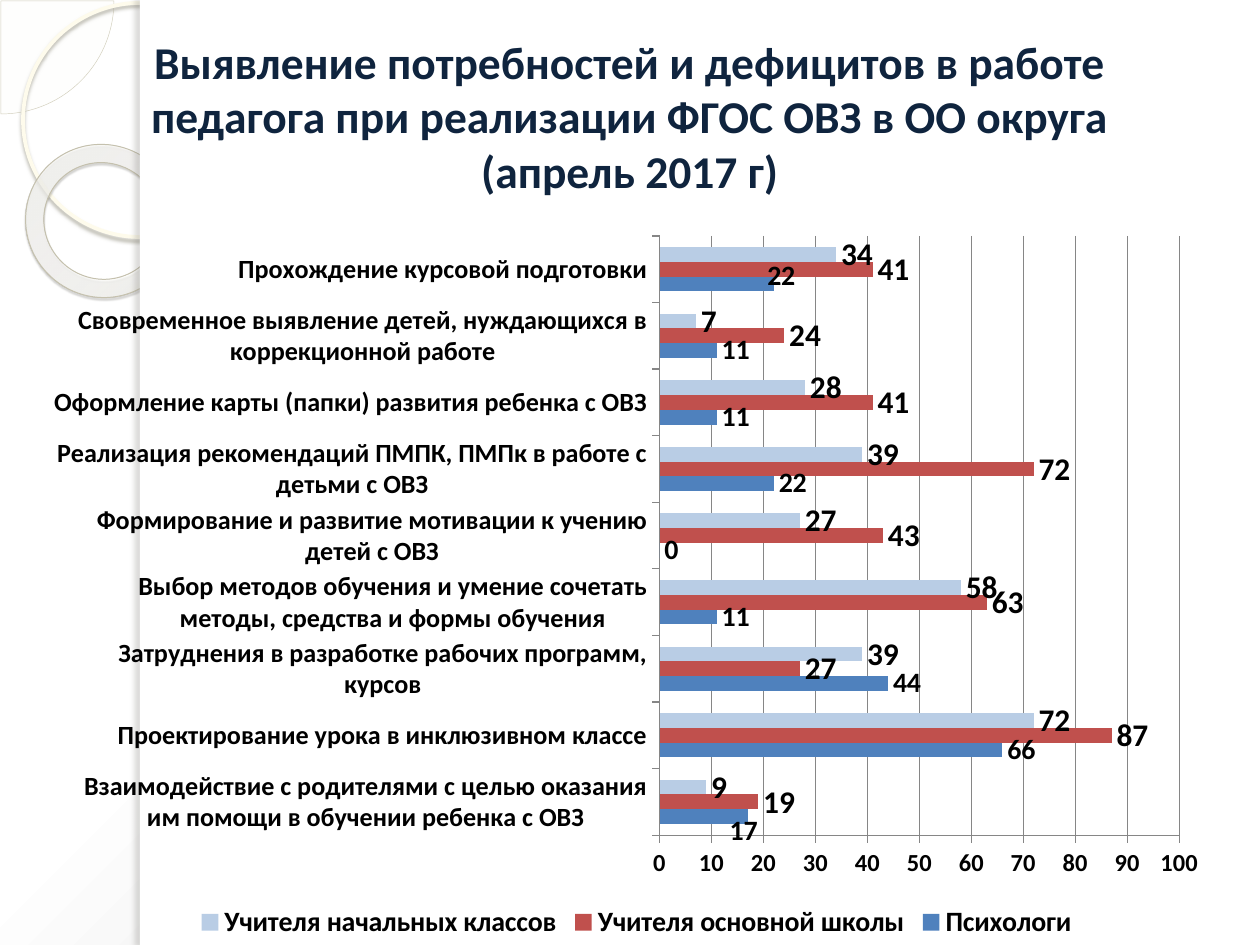
from lxml.etree import SubElement
from pptx import Presentation
from pptx.chart.data import CategoryChartData
from pptx.dml.color import RGBColor
from pptx.enum.chart import XL_CHART_TYPE as ChartType, XL_LEGEND_POSITION as LegendPosition, XL_TICK_MARK as TickMark
from pptx.enum.shapes import MSO_SHAPE as Preset
from pptx.enum.text import MSO_ANCHOR as Anchor, PP_ALIGN as Align
from pptx.oxml import parse_xml
from pptx.oxml.ns import nsdecls, qn
from pptx.util import Emu, Pt

PX = 914400 / 126
FONT = "Calibri"
WHITE = RGBColor(0xFF, 0xFF, 0xFF)
BLACK = RGBColor(0, 0, 0)
NAVY = RGBColor(0x0F, 0x24, 0x3E)
GRID = RGBColor(0x86, 0x86, 0x86)
BLUE = RGBColor(0x4F, 0x81, 0xBD)
RED = RGBColor(0xC0, 0x50, 0x4D)
PALE_BLUE = RGBColor(0xB9, 0xCD, 0xE5)
GREY = RGBColor(0xC5, 0xC5, 0xC5)
IVORY = RGBColor(0xFD, 0xFD, 0xF9)
CREAM = RGBColor(0xFE, 0xFB, 0xEC)
SAND = RGBColor(0xD1, 0xCE, 0xBB)
RING_EDGE = RGBColor(0xC5, 0xC1, 0xAE)
RING_STOPS = [(0, RGBColor(0xFE, 0xFD, 0xFA), 70), (70, RGBColor(0xFF, 0xFF, 0xFC), 55),
              (100, RGBColor(0xE2, 0xDB, 0xB7), 60)]
PAGE_STOPS = [(0, WHITE, 100), (40, WHITE, 100), (100, GREY, 100)]
CIRCLE_SHADOW = (RGBColor(0xB2, 0xB0, 0xA4), 85, 2, 2, 90)
RING_SHADOW = (RGBColor(0x5A, 0x58, 0x50), 35, 1, 1.2, 75)
EDGE_SHADOW = (RGBColor(0x77, 0x75, 0x6F), 25, 3, 3, 180)

TITLE = "Выявление потребностей и дефицитов в работе педагога при реализации ФГОС ОВЗ в ОО округа\v(апрель 2017 г)"
NEEDS = [
    "Взаимодействие с родителями с целью оказания им помощи в обучении ребенка с ОВЗ",
    "Проектирование урока в инклюзивном классе",
    "Затруднения в разработке рабочих программ, курсов",
    "Выбор методов обучения и умение сочетать методы, средства и формы обучения",
    "Формирование и развитие мотивации к учению детей с ОВЗ",
    "Реализация рекомендаций ПМПК, ПМПк в работе с детьми с ОВЗ",
    "Оформление карты (папки) развития ребенка с ОВЗ",
    "Свовременное выявление детей, нуждающихся в коррекционной работе",
    "Прохождение курсовой подготовки",
]
GROUPS = [
    ("Психологи", (17, 66, 44, 11, 0, 22, 11, 11, 22), BLUE, 16),
    ("Учителя основной школы", (19, 87, 27, 63, 43, 72, 41, 24, 41), RED, 18),
    ("Учителя начальных классов", (9, 72, 39, 58, 27, 39, 28, 7, 34), PALE_BLUE, 18),
]
LABEL_SHIFTS = {0: (-0.02, 0.02), 8: (-0.01, -0.01)}


def px(*lengths):
    return [Emu(round(length * PX)) for length in lengths]


def set_alpha(color, percent):
    SubElement(color, qn("a:alpha"), val=str(percent * 1000))


def apply_gradient(no_fill, stops, focus):
    gradient = parse_xml(f'<a:gradFill {nsdecls("a")} rotWithShape="1"><a:gsLst/>'
                         '<a:path path="circle"><a:fillToRect/></a:path></a:gradFill>')
    for position, color, alpha in stops:
        stop = SubElement(gradient[0], qn("a:gs"), pos=str(position * 1000))
        set_alpha(SubElement(stop, qn("a:srgbClr"), val=str(color)), alpha)
    for side, percent in zip("ltrb", focus):
        gradient[1][0].set(side, str(percent * 1000))
    no_fill.getparent().replace(no_fill, gradient)


def add_shadow(shape, color, alpha, blur, distance, angle):
    effects = shape._element.spPr.find(qn("a:effectLst"))
    shadow = SubElement(effects, qn("a:outerShdw"), blurRad=str(Pt(blur)), dist=str(Pt(distance)),
                        dir=str(angle * 60000), algn="tl", rotWithShape="0")
    set_alpha(SubElement(shadow, qn("a:srgbClr"), val=str(color)), alpha)


def add_decor(slide, preset, box, fill=None, line=None, width=0, shadow=None):
    shape = slide.shapes.add_shape(preset, *px(*box))
    shape.shadow.inherit = False
    if fill is None:
        shape.fill.background()
    else:
        shape.fill.solid()
        shape.fill.fore_color.rgb = fill
    if line is None:
        shape.line.fill.background()
    else:
        shape.line.color.rgb = line
        shape.line.width = Pt(width)
    if shadow:
        add_shadow(shape, *shadow)
    return shape


def add_side_band(slide):
    quarter = add_decor(slide, Preset.PIE, (-112, -112, 226, 226), IVORY, SAND, 0.25)
    quarter.adjustments[0] = 0
    quarter.adjustments[1] = 54
    set_alpha(quarter._element.spPr.find(qn("a:solidFill"))[0], 33)
    add_decor(slide, Preset.OVAL, (23, 3, 234, 234), None, CREAM, 2.15, CIRCLE_SHADOW)
    ring = add_decor(slide, Preset.DONUT, (25, 145, 155, 152), None, RING_EDGE, 0.58, RING_SHADOW)
    ring.adjustments[0] = 0.12
    ring.rotation = 38.6
    apply_gradient(ring._element.spPr.find(qn("a:noFill")), RING_STOPS, (-408, -50, 508, 150))
    add_decor(slide, Preset.RECTANGLE, (140, 0, 1120, 945), WHITE)
    add_decor(slide, Preset.RECTANGLE, (140, 0, 10, 945), WHITE, shadow=EDGE_SHADOW)


def style_font(font, size, color=BLACK):
    font.name = FONT
    font.size = Pt(size)
    font.bold = True
    font.color.rgb = color


def place_title(slide):
    title = slide.shapes.title
    slide.shapes._spTree.append(title._element)
    title.left, title.top, title.width, title.height = px(63, 26, 1134, 179)
    frame = title.text_frame
    frame.text = TITLE
    frame.word_wrap = True
    frame.vertical_anchor = Anchor.MIDDLE
    frame.paragraphs[0].alignment = Align.CENTER
    for run in frame.paragraphs[0].runs:
        style_font(run.font, 26, NAVY)


def manual_layout(**values):
    layout = parse_xml(f'<c:layout {nsdecls("c")}><c:manualLayout/></c:layout>')
    for tag, value in values.items():
        SubElement(layout[0], qn(f"c:{tag}"), val=str(value))
    return layout


def style_axis(axis, size):
    axis.major_tick_mark = TickMark.OUTSIDE
    axis.format.line.color.rgb = GRID
    style_font(axis.tick_labels.font, size)


def style_series(series, color, label_size):
    series.format.fill.solid()
    series.format.fill.fore_color.rgb = color
    series.data_labels.show_value = True
    style_font(series.data_labels.font, label_size)


def shift_labels(series, size):
    for index in LABEL_SHIFTS:
        style_font(series.points[index].data_label.font, size)
    for label, (x, y) in zip(series._element.xpath("c:dLbls/c:dLbl"), LABEL_SHIFTS.values()):
        label.find(qn("c:idx")).addnext(manual_layout(x=x, y=y))


def add_needs_chart(slide):
    data = CategoryChartData()
    data.categories = NEEDS
    for name, values, _, _ in GROUPS:
        data.add_series(name, values)
    chart = slide.shapes.add_chart(ChartType.BAR_CLUSTERED, *px(54, 214, 1160, 731), data).chart
    style_font(chart.font, 12)
    chart.has_title = False
    chart.has_legend = True
    chart.legend.position = LegendPosition.BOTTOM
    chart.legend.include_in_layout = False
    style_font(chart.legend.font, 16)
    style_axis(chart.category_axis, 15)
    style_axis(chart.value_axis, 14)
    chart.value_axis.minimum_scale = 0
    chart.value_axis.maximum_scale = 100
    chart.value_axis.major_unit = 10
    chart.value_axis.has_major_gridlines = True
    chart.value_axis.major_gridlines.format.line.color.rgb = GRID
    plot = chart.plots[0]
    plot.gap_width = 150
    plot.vary_by_categories = False
    for series, (_, _, color, label_size) in zip(plot.series, GROUPS):
        style_series(series, color, label_size)
    shift_labels(plot.series[0], GROUPS[0][3])
    area = chart._chartSpace.chart.plotArea
    for layout in area.findall(qn("c:layout")):
        area.remove(layout)
    area.insert(0, manual_layout(layoutTarget="inner", xMode="edge", yMode="edge",
                                 x=0.52, y=0.03, w=0.45, h=0.82))


def main():
    deck = Presentation()
    deck.slide_width, deck.slide_height = px(1260, 945)
    slide = deck.slides.add_slide(deck.slide_layouts[5])
    slide.background.fill.background()
    apply_gradient(slide._element.xpath(".//p:bgPr/a:noFill")[0], PAGE_STOPS, (-24, -20, 124, 120))
    add_side_band(slide)
    place_title(slide)
    add_needs_chart(slide)
    deck.save("out.pptx")


if __name__ == "__main__":
    main()
